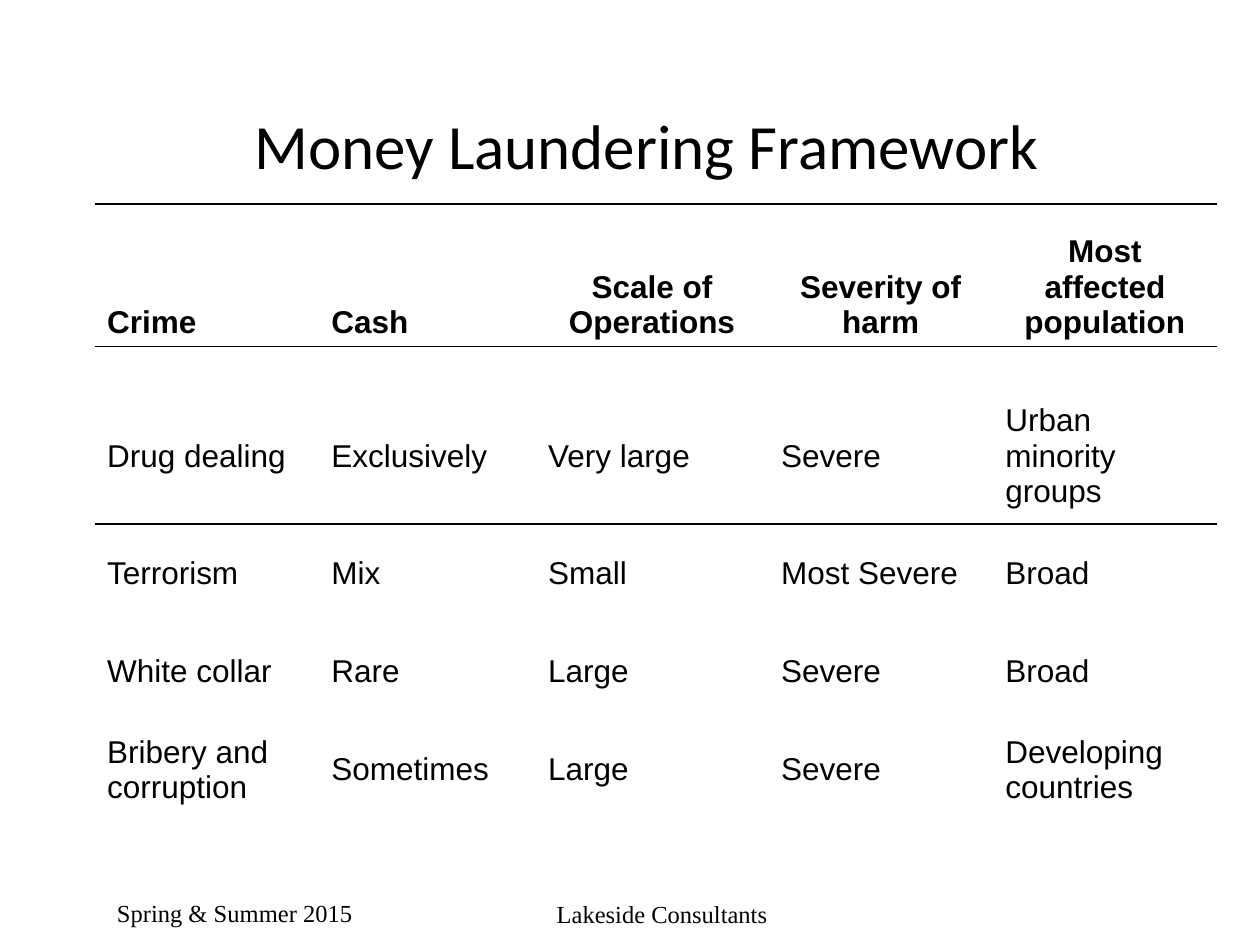
from lxml import etree
from pptx import Presentation
from pptx.dml.color import RGBColor
from pptx.enum import text as t
from pptx.oxml.ns import qn
from pptx.util import Inches, Pt

COLORS = {"ink": "000000"}
NO_GRID_STYLE = "{2D5ABB26-0587-4C30-8999-92F81FD0307C}"
LEFT, CENTER = t.PP_ALIGN.LEFT, t.PP_ALIGN.CENTER

TITLE_FONT = {"name": "Calibri", "size": Pt(36), "bold": False}
FOOTER_FONT = {"name": "Times New Roman", "size": Pt(14)}
CELL_FONT = {"name": "Arial", "size": Pt(18), "bold": False}
HEADER_FONT = {**CELL_FONT, "bold": True}

COLUMN_WIDTHS = [1.78, 1.72, 1.85, 1.78, 1.78]
ROW_HEIGHTS = [1.13, 1.41, 0.78, 0.78, 0.78, 0.71]
FIRST_CRIME_MARGIN = 0.38
ROWS = [
    ["Crime", "Cash", "Scale of Operations", "Severity of harm",
     "Most affected population"],
    ["Drug dealing", "Exclusively", "Very large", "Severe",
     "Urban minority groups"],
    ["Terrorism", "Mix", "Small", "Most Severe", "Broad"],
    ["White collar", "Rare", "Large", "Severe", "Broad"],
    ["Bribery and corruption", "Sometimes", "Large", "Severe",
     "Developing countries"],
    [""] * 5,
]


def write_text(frame, words, font, alignment=LEFT):
    frame.word_wrap = True
    paragraph = frame.paragraphs[0]
    paragraph.alignment = alignment
    run = paragraph.add_run()
    run.text = words
    for name, value in font.items():
        setattr(run.font, name, value)
    run.font.color.rgb = RGBColor.from_string(COLORS["ink"])


def place(shape, left, top, width, height):
    shape.left, shape.top = Inches(left), Inches(top)
    shape.width, shape.height = Inches(width), Inches(height)


def add_title(slide, words):
    title = slide.shapes.title
    place(title, 0.67, 0.6, 8.92, 1.09)
    title.text_frame.vertical_anchor = t.MSO_ANCHOR.MIDDLE
    write_text(title.text_frame, words, TITLE_FONT, CENTER)


def add_footer(slide, words, box, alignment):
    footer = slide.shapes.add_textbox(*map(Inches, box))
    footer.text_frame.vertical_anchor = t.MSO_ANCHOR.MIDDLE
    write_text(footer.text_frame, words, FOOTER_FONT, alignment)


def add_borders(cell, sides):
    """Draw one-point lines; they must come before the fill in the XML."""
    properties = cell._tc.get_or_add_tcPr()
    for position, side in enumerate(sides):
        line = etree.Element(qn(f"a:ln{side}"), w=str(Pt(1)))
        fill = etree.SubElement(line, qn("a:solidFill"))
        etree.SubElement(fill, qn("a:srgbClr"), val=COLORS["ink"])
        properties.insert(position, line)


def add_crime_table(slide):
    frame = slide.shapes.add_table(
        len(ROWS), len(COLUMN_WIDTHS), Inches(0.75), Inches(1.62),
        Inches(sum(COLUMN_WIDTHS)), Inches(sum(ROW_HEIGHTS)))
    table = frame.table
    table.first_row = table.horz_banding = False
    table._tbl.tblPr.find(qn("a:tableStyleId")).text = NO_GRID_STYLE
    for column, width in zip(table.columns, COLUMN_WIDTHS):
        column.width = Inches(width)
    for row, height in zip(table.rows, ROW_HEIGHTS):
        row.height = Inches(height)

    for row_index, row in enumerate(ROWS):
        is_header = row_index == 0
        for column_index, words in enumerate(row):
            cell = table.cell(row_index, column_index)
            cell.fill.background()
            cell.vertical_anchor = (t.MSO_ANCHOR.BOTTOM if is_header
                                    else t.MSO_ANCHOR.MIDDLE)
            if is_header:
                add_borders(cell, "TB")
            elif row_index == 1:
                add_borders(cell, "T")
                cell.margin_top = Inches(FIRST_CRIME_MARGIN)
            if words:
                centered = is_header and column_index >= 2
                write_text(cell.text_frame, words,
                           HEADER_FONT if is_header else CELL_FONT,
                           CENTER if centered else LEFT)


def main():
    presentation = Presentation()
    presentation.slide_width = Inches(10)
    presentation.slide_height = Inches(7.5)
    slide = presentation.slides.add_slide(presentation.slide_layouts[5])
    add_footer(slide, "Spring & Summer 2015", (0.83, 6.99, 2.25, 0.5), LEFT)
    add_footer(slide, "Lakeside Consultants", (3.67, 7, 3.17, 0.5), CENTER)
    add_title(slide, "Money Laundering Framework")
    add_crime_table(slide)
    presentation.save("out.pptx")


if __name__ == "__main__":
    main()
